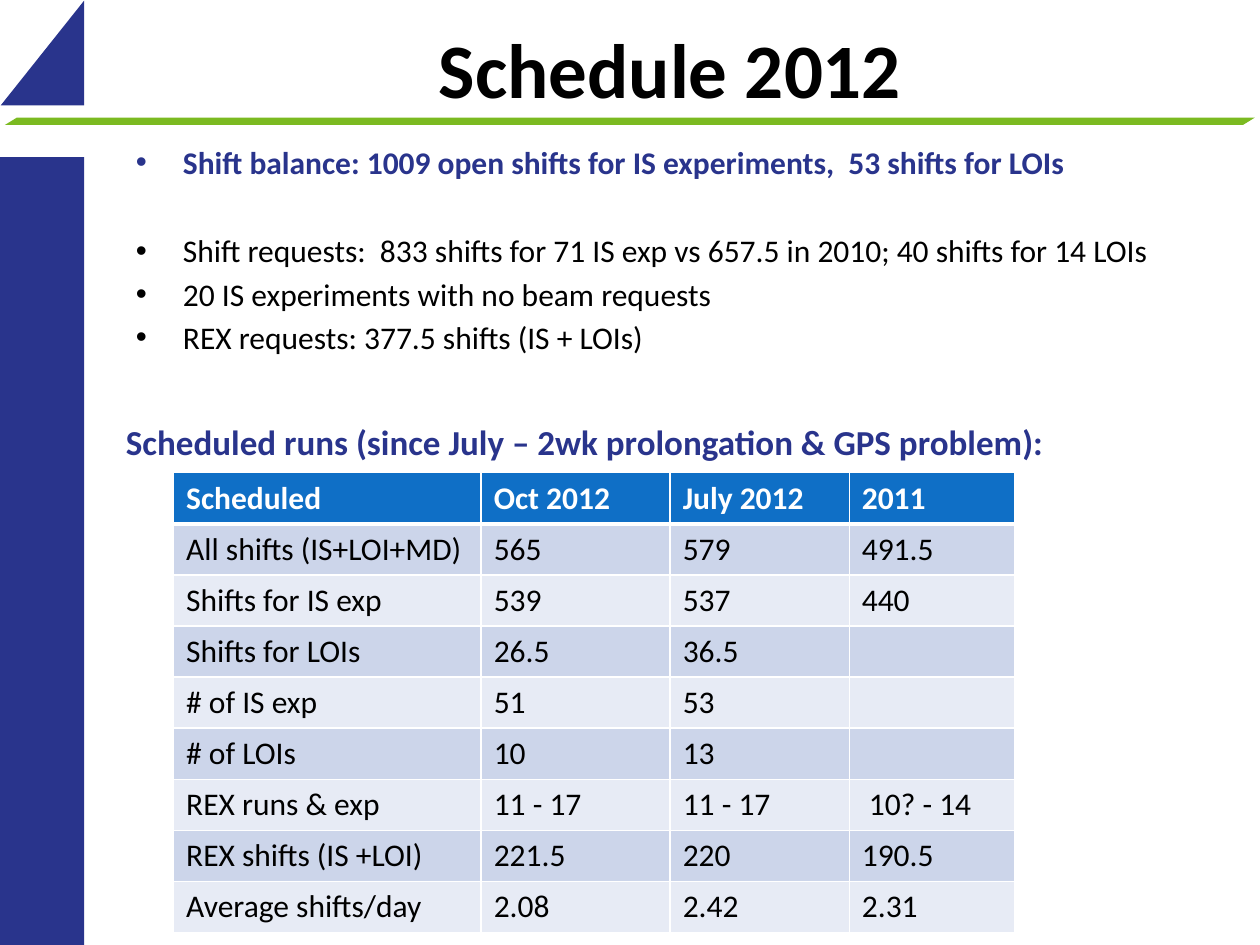
from dataclasses import dataclass

from lxml import etree
from pptx import Presentation
from pptx import util as u
from pptx.dml.color import RGBColor
from pptx.enum import shapes, text
from pptx.oxml.ns import qn


@dataclass(frozen=True)
class Theme:
    font: str = "Calibri"
    navy: str = "29348C"
    green: str = "7BBA21"
    black: str = "000000"
    white: str = "FFFFFF"
    header: str = "0F6FC6"
    bands: tuple = ("CCD5EA", "E7EBF5")
    title_size: int = 44
    heading_size: int = 20
    body_size: int = 18


BULLETS = [  # text, highlighted, space before in points
    ("Shift balance: 1009 open shifts for IS experiments,  53 shifts for LOIs", True, 0),
    ("Shift requests:  833 shifts for 71 IS exp vs 657.5 in 2010; 40 shifts for 14 LOIs", False, 28.8),
    ("20 IS experiments with no beam requests", False, 3.2),
    ("REX requests: 377.5 shifts (IS + LOIs)", False, 3.2),
]
RUNS = [
    ("Scheduled", "Oct 2012", "July 2012", "2011"),
    ("All shifts (IS+LOI+MD)", "565", "579", "491.5"),
    ("Shifts for IS exp", "539", "537", "440"),
    ("Shifts for LOIs", "26.5", "36.5", ""),
    ("# of IS exp", "51", "53", ""),
    ("# of LOIs", "10", "13", ""),
    ("REX runs & exp", "11 - 17", "11 - 17", " 10? - 14"),
    ("REX shifts (IS +LOI)", "221.5", "220", "190.5"),
    ("Average shifts/day", "2.08", "2.42", "2.31"),
]


def set_all(target, values):
    for name, value in values.items():
        setattr(target, name, value)


class SlideBuilder:
    def __init__(self, slide, theme):
        self.slide = slide
        self.theme = theme

    def add_words(self, para, words, size, color, bold=False):
        span = para.add_run()
        span.text = words
        for font in (para.font, span.font):
            set_all(font, {"name": self.theme.font, "size": u.Pt(size), "bold": bold})
            font.color.rgb = RGBColor.from_string(color)

    def block(self, kind, place, color, rotation=0):
        shape = self.slide.shapes.add_shape(kind, *map(u.Cm, place))
        shape.fill.solid()
        shape.fill.fore_color.rgb = RGBColor.from_string(color)
        shape.line.fill.background()
        shape.shadow.inherit = False
        shape.rotation = rotation
        return shape

    def title(self, words, place):
        box = self.slide.shapes.title
        set_all(box, dict(zip(("left", "top", "width", "height"), map(u.Cm, place))))
        set_all(box.text_frame, {"word_wrap": True, "vertical_anchor": text.MSO_ANCHOR.MIDDLE,
                                 "auto_size": text.MSO_AUTO_SIZE.NONE})
        para = box.text_frame.paragraphs[0]
        para.alignment = text.PP_ALIGN.CENTER
        self.add_words(para, words, self.theme.title_size, self.theme.black, True)

    def text_box(self, place):
        frame = self.slide.shapes.add_textbox(*map(u.Cm, place)).text_frame
        frame.word_wrap = True
        return frame

    def heading(self, words, place):
        para = self.text_box(place).paragraphs[0]
        self.add_words(para, words, self.theme.heading_size, self.theme.navy, True)

    def bullets(self, items, place, indent=0.95):
        frame = self.text_box(place)
        for index, (words, highlighted, gap) in enumerate(items):
            para = frame.add_paragraph() if index else frame.paragraphs[0]
            para.space_before = u.Pt(gap)
            props = para._p.get_or_add_pPr()
            props.set("marL", str(u.Cm(indent)))
            props.set("indent", str(-u.Cm(indent)))
            etree.SubElement(props, qn("a:buFont"), typeface="Arial")
            etree.SubElement(props, qn("a:buChar"), char="•")
            color = self.theme.navy if highlighted else self.theme.black
            self.add_words(para, words, self.theme.body_size, color, highlighted)

    def borders(self, cell, row):
        """White cell edges, with a heavier rule under the header row."""
        weights = {"L": 1, "R": 1, "T": 3 if row == 1 else 1, "B": 3 if row == 0 else 1}
        props = cell._tc.get_or_add_tcPr()
        for side, weight in weights.items():
            line = etree.SubElement(props, qn(f"a:ln{side}"), w=str(u.Pt(weight)))
            fill = etree.SubElement(line, qn("a:solidFill"))
            etree.SubElement(fill, qn("a:srgbClr"), val=self.theme.white)

    def table(self, rows, left, top, widths, row_height):
        lengths = (left, top, sum(widths), row_height * len(rows))
        table = self.slide.shapes.add_table(len(rows), len(widths), *map(u.Cm, lengths)).table
        for column, width in zip(table.columns, widths):
            column.width = u.Cm(width)
        for r, values in enumerate(rows):
            table.rows[r].height = u.Cm(row_height)
            is_header = r == 0
            fill = self.theme.header if is_header else self.theme.bands[(r - 1) % 2]
            color = self.theme.white if is_header else self.theme.black
            for c, words in enumerate(values):
                cell = table.cell(r, c)
                self.borders(cell, r)
                cell.fill.solid()
                cell.fill.fore_color.rgb = RGBColor.from_string(fill)
                para = cell.text_frame.paragraphs[0]
                if words:
                    self.add_words(para, words, self.theme.body_size, color, is_header)
                else:
                    para.font.size = u.Pt(self.theme.body_size)


def main():
    deck = Presentation()
    deck.slide_width, deck.slide_height = u.Cm(25.4), u.Cm(19.05)
    theme = Theme()
    page = SlideBuilder(deck.slides.add_slide(deck.slide_layouts[5]), theme)
    kinds = shapes.MSO_SHAPE

    page.block(kinds.RECTANGLE, (0, 3.17, 1.7, 15.88), theme.navy)
    page.block(kinds.RIGHT_TRIANGLE, (-0.2, 0.23, 2.11, 1.68), theme.navy, 270)
    rule = page.block(kinds.PARALLELOGRAM, (0.1, 2.37, 25.2, 0.15), theme.green)
    rule.adjustments[0] = 1.62

    page.title("Schedule 2012", (2.9, 0, 21.23, 2.72))
    page.bullets(BULLETS, (2.49, 2.76, 21.87, 4.8))
    page.heading("Scheduled runs (since July – 2wk prolongation & GPS problem):",
                 (2.29, 8.36, 19.84, 1.12))
    page.table(RUNS, 3.5, 9.53, (6.2, 3.81, 3.61, 3.33), 1.03)
    deck.save("out.pptx")


if __name__ == "__main__":
    main()
